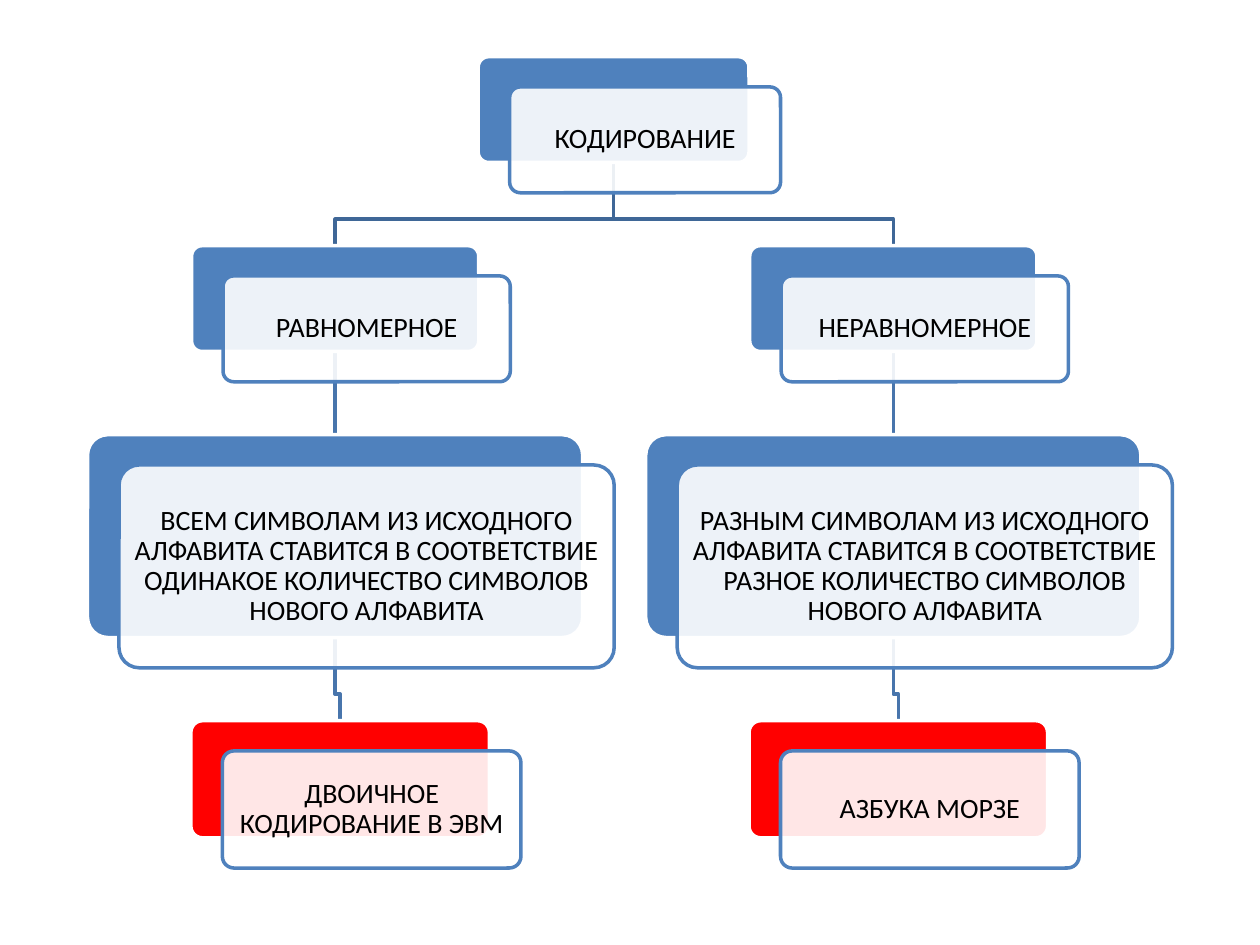
"""Build a slide with a tree of coding types."""
from lxml.etree import SubElement
from pptx import Presentation
from pptx.dml.color import RGBColor
from pptx.enum.shapes import MSO_CONNECTOR as Link, MSO_SHAPE as Shape
from pptx.enum.text import MSO_ANCHOR as Anchor, PP_ALIGN as Align
from pptx.oxml.ns import qn
from pptx.util import Inches, Pt

BLUE = RGBColor(0x4F, 0x81, 0xBD)
RED = RGBColor(0xFF, 0x00, 0x00)
WHITE = RGBColor(0xFF, 0xFF, 0xFF)
BLACK = RGBColor(0x00, 0x00, 0x00)
DARK = RGBColor(0x3F, 0x67, 0x97)
STEEL = RGBColor(0x48, 0x75, 0xAC)

ROOT = "КОДИРОВАНИЕ"
BRANCHES = [
    (2.66, [
        "РАВНОМЕРНОЕ",
        "ВСЕМ СИМВОЛАМ ИЗ ИСХОДНОГО АЛФАВИТА СТАВИТСЯ В СООТВЕТСТВИЕ "
        "ОДИНАКОЕ КОЛИЧЕСТВО СИМВОЛОВ НОВОГО АЛФАВИТА",
        "ДВОИЧНОЕ КОДИРОВАНИЕ В ЭВМ",
    ]),
    (7.09, [
        "НЕРАВНОМЕРНОЕ",
        "РАЗНЫМ СИМВОЛАМ ИЗ ИСХОДНОГО АЛФАВИТА СТАВИТСЯ В СООТВЕТСТВИЕ "
        "РАЗНОЕ КОЛИЧЕСТВО СИМВОЛОВ НОВОГО АЛФАВИТА",
        "АЗБУКА МОРЗЕ",
    ]),
]
MIDDLE = 4.87
LEVELS = [
    (2.15, 0.84, 0, BLUE),
    (2.28, 0.84, 0, BLUE),
    (3.93, 1.61, 0, BLUE),
    (2.37, 0.93, 0.04, RED),
]
TOP, GAP, BEND = 0.45, 0.66, 0.45
SHIFT_X, SHIFT_Y = 0.25, 0.24
TOPS = [TOP + sum(level[1] + GAP for level in LEVELS[:i])
        for i in range(len(LEVELS))]


def add_card(shapes, left, top, width, height, fill, line):
    card = shapes.add_shape(Shape.ROUNDED_RECTANGLE, Inches(left), Inches(top),
                            Inches(width), Inches(height))
    card.adjustments[0] = 0.1
    card.shadow.inherit = False
    card.fill.solid()
    card.fill.fore_color.rgb = fill
    card.line.color.rgb = line
    card.line.width = Pt(2)
    return card


def add_node(shapes, center, level, text):
    width, height, shift, color = LEVELS[level]
    left, top = center + shift - width / 2, TOPS[level]
    back = add_card(shapes, left, top, width, height, color, WHITE)
    front = add_card(shapes, left + SHIFT_X, top + SHIFT_Y, width, height,
                     WHITE, BLUE)
    tint = front.fill._xPr.find(qn("a:solidFill"))[0]
    SubElement(tint, qn("a:alpha"), val="90000")
    frame = front.text_frame
    frame.text = text
    frame.word_wrap = True
    frame.vertical_anchor = Anchor.MIDDLE
    frame.margin_left = frame.margin_right = Inches(0.07)
    frame.margin_top = frame.margin_bottom = Inches(0.07)
    para = frame.paragraphs[0]
    para.alignment = Align.CENTER
    para.line_spacing = 0.9
    para.space_after = Pt(5.6)
    font = para.runs[0].font
    font.name, font.size = "Calibri", Pt(16)
    font.color.rgb = BLACK
    return back


def send_back(shapes, wire, color):
    wire.line.color.rgb = color
    wire.line.width = Pt(2)
    shapes._spTree.insert(2, wire._element)


def add_bend(shapes, start, end, level, color):
    top = TOPS[level] - GAP
    turn = top + BEND
    path = shapes.build_freeform(Inches(start), Inches(top))
    path.add_line_segments(
        [(Inches(x), Inches(y))
         for x, y in [(start, turn), (end, turn), (end, TOPS[level])]],
        close=False)
    wire = path.convert_to_shape()
    wire.fill.background()
    wire.shadow.inherit = False
    send_back(shapes, wire, color)


def add_link(shapes, upper, lower):
    wire = shapes.add_connector(Link.STRAIGHT, 0, 0, 0, 0)
    wire.begin_connect(upper, 2)
    wire.end_connect(lower, 0)
    SubElement(wire._element.spPr, qn("a:effectLst"))
    send_back(shapes, wire, STEEL)


def main():
    deck = Presentation()
    deck.slide_width, deck.slide_height = Inches(10), Inches(7.5)
    shapes = deck.slides.add_slide(deck.slide_layouts[6]).shapes
    add_node(shapes, MIDDLE, 0, ROOT)
    for center, texts in BRANCHES:
        kind, rule, case = [add_node(shapes, center, level, text)
                            for level, text in enumerate(texts, 1)]
        add_bend(shapes, MIDDLE, center, 1, DARK)
        add_link(shapes, kind, rule)
        add_bend(shapes, center, center + LEVELS[3][2], 3, STEEL)
    deck.save("out.pptx")


if __name__ == "__main__":
    main()
